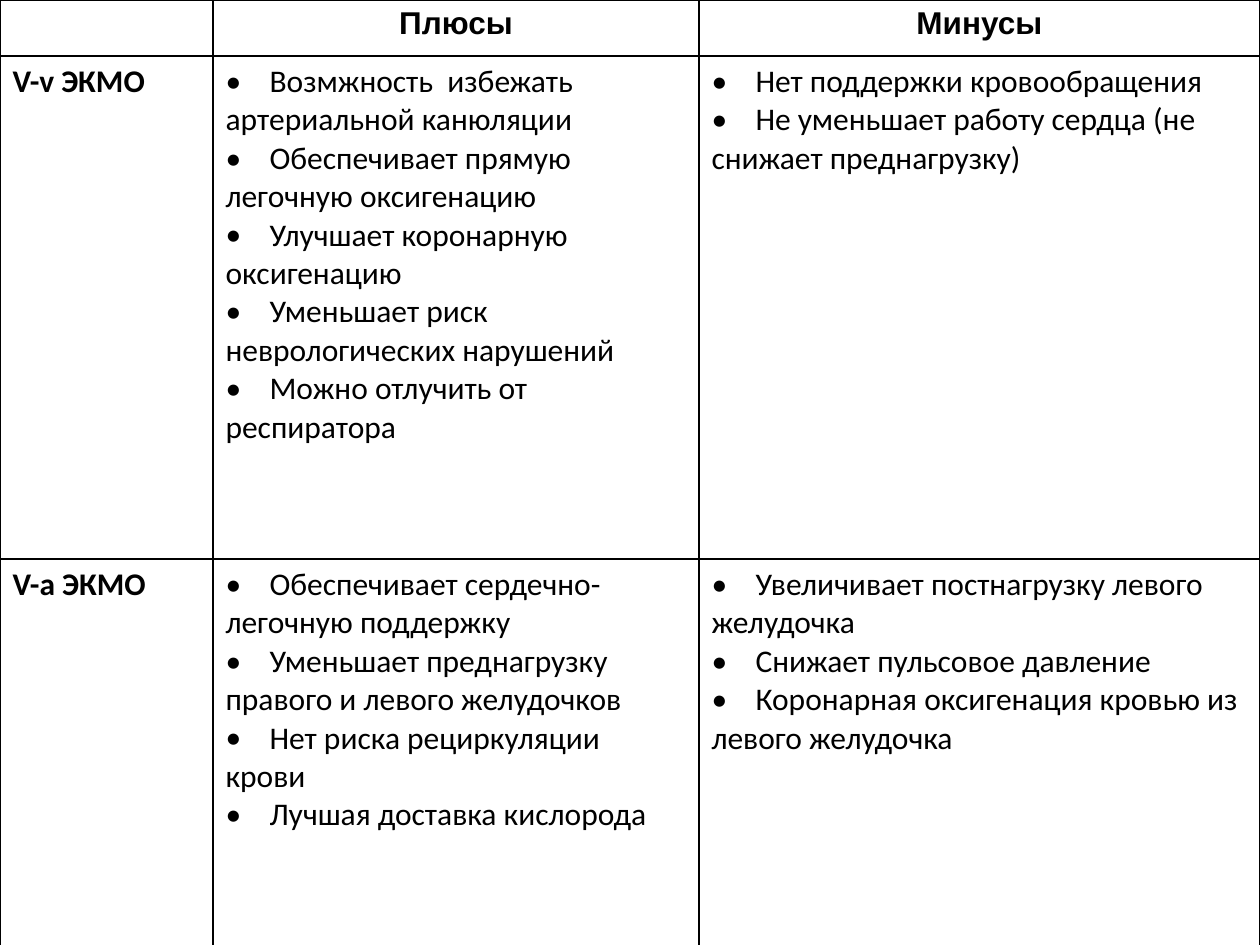
import pptx
import pptx.dml.color
import pptx.enum.text
import pptx.oxml
import pptx.oxml.ns
import pptx.util

PX = 914400 // 126
NS = pptx.oxml.ns.nsdecls("a")


def px(n):
    return pptx.util.Emu(n * PX)


def color(code):
    return pptx.dml.color.RGBColor.from_string(code)


class Deck:
    ink = "000000"
    paper = "FFFFFF"
    head = "Arial"
    body = "Calibri"
    size = 18
    line = 12700
    tab = 44

    def __init__(self):
        self.file = pptx.Presentation()
        self.file.slide_width = px(1260)
        self.file.slide_height = px(945)
        self.slide = self.file.slides.add_slide(self.file.slide_layouts[6])

    def table(self, cols, rows):
        frame = self.slide.shapes.add_table(
            len(rows), len(cols), 0, 0, px(sum(cols)), px(sum(rows)))
        table = frame.table
        table.first_row = table.horz_banding = False
        for col, width in zip(table.columns, cols):
            col.width = px(width)
        for row, height in zip(table.rows, rows):
            row.height = px(height)
        for cell in table.iter_cells():
            self.border(cell)
            cell.fill.solid()
            cell.fill.fore_color.rgb = color(self.paper)
        return table

    def border(self, cell):
        props = cell._tc.get_or_add_tcPr()
        for side in ("lnL", "lnR", "lnT", "lnB"):
            props.append(pptx.oxml.parse_xml(
                f'<a:{side} {NS} w="{self.line}"><a:solidFill>'
                f'<a:srgbClr val="{self.ink}"/></a:solidFill></a:{side}>'))

    def style(self, para, face, bold):
        para.font.name = face
        para.font.size = pptx.util.Pt(self.size)
        para.font.bold = bold
        para.font.color.rgb = color(self.ink)

    def title(self, cell, text):
        para = cell.text_frame.paragraphs[0]
        para.text = text
        para.alignment = pptx.enum.text.PP_ALIGN.CENTER
        self.style(para, self.head, True)

    def label(self, cell, text):
        para = cell.text_frame.paragraphs[0]
        para.text = text
        self.style(para, self.body, True)

    def items(self, cell, lines):
        cell.text_frame.text = "\n".join("\t" + line for line in lines)
        for para in cell.text_frame.paragraphs:
            props = para._p.get_or_add_pPr()
            props.set("marL", "0")
            props.set("indent", "0")
            for node in (
                    f'<a:buFont {NS} typeface="{self.body}"/>',
                    f'<a:buChar {NS} char="•"/>',
                    f'<a:tabLst {NS}><a:tab pos="{px(self.tab)}" algn="l"/></a:tabLst>'):
                props.append(pptx.oxml.parse_xml(node))
            self.style(para, self.body, False)


HEADS = ["Плюсы", "Минусы"]
MODES = [
    ("V-v ЭКМО",
     ["Возмжность  избежать артериальной канюляции",
      "Обеспечивает прямую легочную оксигенацию",
      "Улучшает коронарную оксигенацию",
      "Уменьшает риск неврологических нарушений",
      "Можно отлучить от респиратора"],
     ["Нет поддержки кровообращения",
      "Не уменьшает работу сердца (не снижает преднагрузку)"]),
    ("V-a ЭКМО",
     ["Обеспечивает сердечно-легочную поддержку",
      "Уменьшает преднагрузку правого и левого желудочков",
      "Нет риска рециркуляции крови",
      "Лучшая доставка кислорода"],
     ["Увеличивает постнагрузку левого желудочка",
      "Снижает пульсовое давление",
      "Коронарная оксигенация кровью из левого желудочка"]),
]


def main():
    deck = Deck()
    table = deck.table([213, 486, 561], [56, 503, 390])
    for col, text in enumerate(HEADS, 1):
        deck.title(table.cell(0, col), text)
    for row, (name, pros, cons) in enumerate(MODES, 1):
        deck.label(table.cell(row, 0), name)
        deck.items(table.cell(row, 1), pros)
        deck.items(table.cell(row, 2), cons)
    deck.file.save("out.pptx")


if __name__ == "__main__":
    main()
